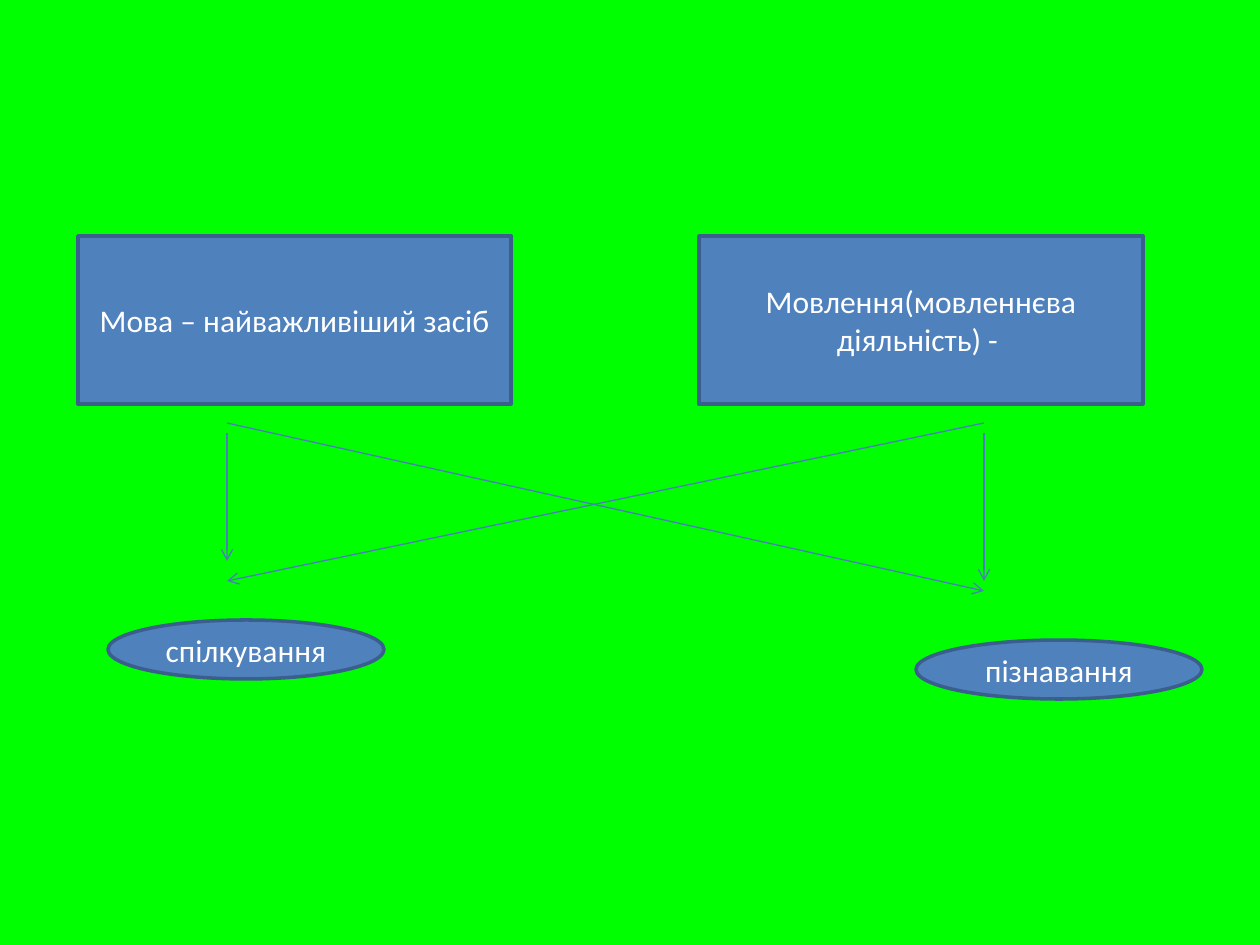
from lxml.etree import SubElement
from pptx import Presentation
from pptx.dml.color import RGBColor
from pptx.enum.shapes import MSO_CONNECTOR, MSO_SHAPE
from pptx.enum.text import MSO_ANCHOR, PP_ALIGN
from pptx.oxml.ns import qn
from pptx.util import Pt

SCALE = 914400 / 126
WIDE, HIGH = 1260, 945
GREEN, BLUE, EDGE, LINK, WHITE = "00FF00", "4F81BD", "3A5F8C", "4B7EBC", "FFFFFF"
FONT = {"name": "Calibri", "size": Pt(18)}
FRAME = {"word_wrap": True, "vertical_anchor": MSO_ANCHOR.MIDDLE}


def px(count):
    return round(count * SCALE)


def paint(fill, color):
    fill.solid()
    fill.fore_color.rgb = RGBColor.from_string(color)


def apply(target, values):
    for key, value in values.items():
        setattr(target, key, value)


def add_node(slide, kind, box, text):
    node = slide.shapes.add_shape(kind, *map(px, box))
    node.shadow.inherit = False
    paint(node.fill, BLUE)
    paint(node.line.fill, EDGE)
    node.line.width = Pt(2)
    apply(node.text_frame, FRAME)
    para = node.text_frame.paragraphs[0]
    para.alignment = PP_ALIGN.CENTER
    run = para.add_run()
    run.text = text
    apply(run.font, FONT)
    paint(run.font.fill, WHITE)


def add_arrow(slide, start, end):
    arrow = slide.shapes.add_connector(
        MSO_CONNECTOR.STRAIGHT, *map(px, start + end))
    paint(arrow.line.fill, LINK)
    arrow.line.width = Pt(0.75)
    SubElement(arrow.line._get_or_add_ln(), qn("a:tailEnd"), type="arrow")
    SubElement(arrow._element.spPr, qn("a:effectLst"))


def add_terms(slide, box):
    left, top, width, height = box
    for shift, span, text in (
        (0, 433, "Мова – найважливіший засіб"),
        (width - 444, 444, "Мовлення(мовленнєва діяльність) - "),
    ):
        add_node(slide, MSO_SHAPE.RECTANGLE,
                 (left + shift, top, span, height), text)


def add_links(slide, box):
    left, top, width, height = box
    right, base = left + width, top + height
    for start, end in (
        ((left, top), (right, base)),
        ((right, top), (left, base - 10)),
        ((left, top + 10), (left, base - 30)),
        ((right, top + 10), (right, base - 10)),
    ):
        add_arrow(slide, start, end)


def add_goals(slide, box):
    left, top, width, height = box
    for shift, drop, span, text in (
        (0, 0, 276, "спілкування"),
        (width - 286, 20, 286, "пізнавання"),
    ):
        add_node(slide, MSO_SHAPE.OVAL,
                 (left + shift, top + drop, span, height - 20), text)


def main():
    deck = Presentation()
    apply(deck, {"slide_width": px(WIDE), "slide_height": px(HIGH)})
    slide = deck.slides.add_slide(deck.slide_layouts[6])
    paint(slide.background.fill, GREEN)
    add_terms(slide, (78, 236, 1065, 168))
    add_links(slide, (227, 423, 757, 168))
    add_goals(slide, (108, 620, 1094, 79))
    deck.save("out.pptx")


if __name__ == "__main__":
    main()
